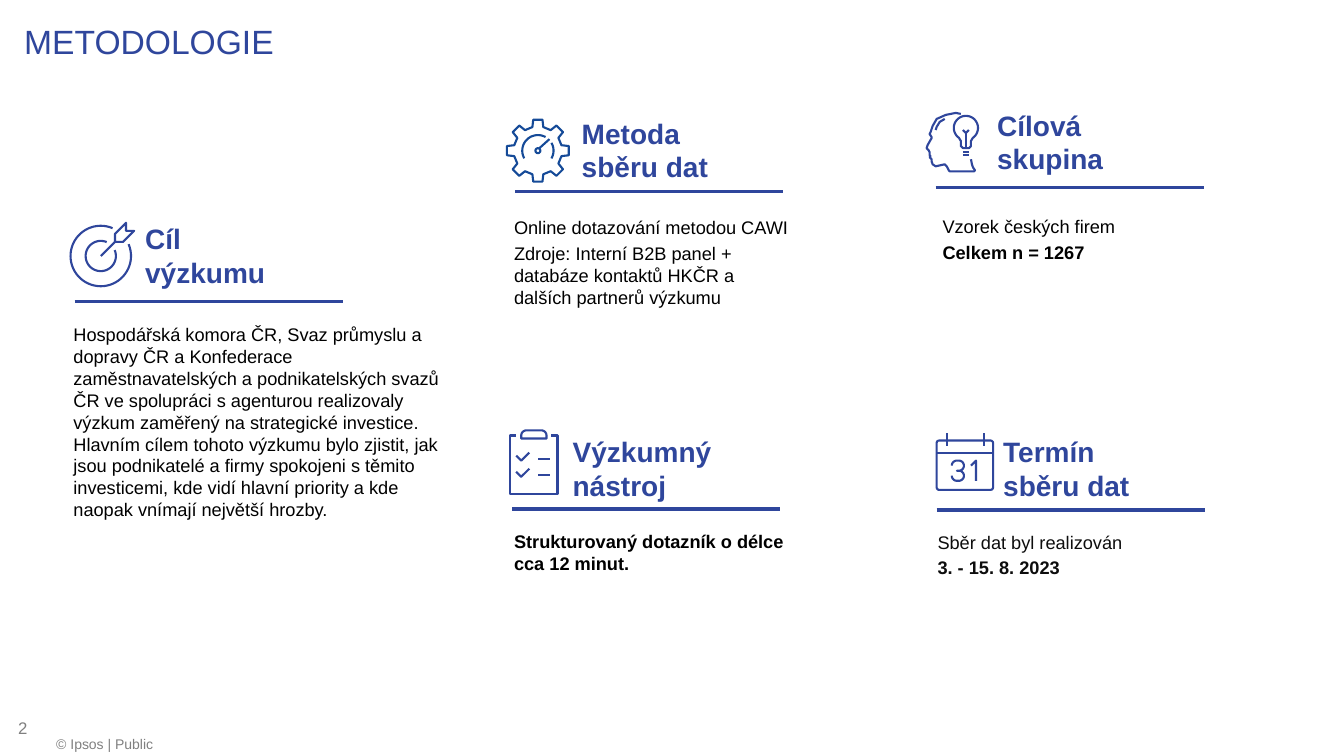
"""Builds the METODOLOGIE slide: five headed sections with line icons."""
import math

import pptx
import pptx.dml.color
import pptx.enum.shapes
import pptx.enum.text
import pptx.oxml.ns
import pptx.util
from lxml import etree

RGBColor = pptx.dml.color.RGBColor
ANCHOR = pptx.enum.text.MSO_ANCHOR
SHAPE = pptx.enum.shapes.MSO_SHAPE
BLUE = RGBColor(0x2F, 0x46, 0x9C)
GEAR_BLUE = RGBColor(0x15, 0x4A, 0x98)
GREY = RGBColor(0x80, 0x80, 0x80)
BLACK = RGBColor(0, 0, 0)
NEAR_BLACK = RGBColor(0x0D, 0x0D, 0x0D)
PX = 9144

GOAL = (
    "Hospodářská komora ČR, Svaz průmyslu a dopravy ČR a Konfederace "
    "zaměstnavatelských a podnikatelských svazů ČR ve spolupráci s agenturou realizovaly "
    "výzkum zaměřený na strategické investice. Hlavním cílem tohoto výzkumu bylo "
    "zjistit, jak jsou podnikatelé a firmy spokojeni s těmito investicemi, kde vidí "
    "hlavní priority a kde naopak vnímají největší hrozby."
)
SECTIONS = [
    (("Cíl", "výzkumu"), (132, 220), (74, 299), (63, 316, 382, 138), BLACK,
     [(GOAL, False)]),
    (("Metoda", "sběru dat"), (565, 115), (511, 190), (500, 210, 298, 136), BLACK,
     [("Online dotazování metodou CAWI", False),
      ("Zdroje: Interní B2B panel + databáze kontaktů HKČR a dalších partnerů výzkumu",
       False)]),
    (("Cílová", "skupina"), (977, 107), (928, 186), (925, 209, 324, 279), BLACK,
     [("Vzorek českých firem", False), ("Celkem n = 1267", True)]),
    (("Výzkumný", "nástroj"), (556, 431), (508, 505), (500, 521, 298, 105), BLACK,
     [("Strukturovaný dotazník o délce cca 12 minut.", True)]),
    (("Termín", "sběru dat"), (983, 431), (929, 506), (920, 522, 298, 105), NEAR_BLACK,
     [("Sběr dat byl realizován", False), ("3. - 15. 8. 2023", True)]),
]
HEAD = [
    (953, 113), (948, 112), (938, 114), (929, 118), (925, 125), (924, 128), (923, 131),
    (922, 133), (924, 136), (924, 137), (920, 144), (919, 147), (921, 149), (922, 151),
    (922, 154), (923, 155), (922, 156), (924, 158), (924, 160), (925, 163), (928, 165),
    (937, 163), (939, 165), (941, 169), (942, 170), (966, 170), (967, 169), (965, 166),
    (964, 163), (963, 158),
]


def emu(*lengths):
    """Turn px lengths into EMU."""
    return [round(length * PX) for length in lengths]


def style(paragraph, size, color, bold=False):
    """Set the font of a whole paragraph."""
    font = paragraph.font
    font.name, font.size, font.bold = "Arial", pptx.util.Pt(size), bold
    font.color.rgb = color


def text_box(page, frame, lines, size, color, gap=0, anchor=ANCHOR.TOP, insets=(10, 5)):
    """Add a wrapped text box with one paragraph per (text, bold) pair."""
    box = page.shapes.add_textbox(*emu(*frame)).text_frame
    box.word_wrap, box.vertical_anchor = True, anchor
    box.margin_left = box.margin_right = insets[0] * PX
    box.margin_top = box.margin_bottom = insets[1] * PX
    for index, (text, bold) in enumerate(lines):
        para = box.add_paragraph() if index else box.paragraphs[0]
        para.text = text
        para.space_before = pptx.util.Pt(gap if index else 0)
        style(para, size, color, bold)


def line(shapes, start, end, color=BLUE, width=1.5):
    """Add a straight line without shadow."""
    connector = shapes.add_connector(
        pptx.enum.shapes.MSO_CONNECTOR.STRAIGHT, *emu(*start, *end))
    connector.line.color.rgb, connector.line.width = color, pptx.util.Pt(width)
    properties = connector._element.find(pptx.oxml.ns.qn("p:spPr"))
    etree.SubElement(properties, pptx.oxml.ns.qn("a:effectLst"))


def hollow(shape, color):
    """Give a shape an outline only."""
    shape.shadow.inherit = False
    shape.fill.background()
    shape.line.color.rgb, shape.line.width = color, pptx.util.Pt(1.5)


def outline(shapes, points, color=BLUE, close=False):
    """Add an unfilled freeform through the points."""
    first, *rest = [emu(*point) for point in points]
    builder = shapes.build_freeform(*first)
    builder.add_line_segments(rest, close=close)
    hollow(builder.convert_to_shape(), color)


def polar(x, y, radius, degrees):
    """Return the point at an angle, clockwise from the right."""
    angle = math.radians(degrees)
    return x + radius * math.cos(angle), y + radius * math.sin(angle)


def arc(x, y, radius, start, end):
    """Return points along an arc."""
    steps = math.ceil((end - start) / 6)
    return [polar(x, y, radius, start + (end - start) * step / steps)
            for step in range(steps + 1)]


def target_icon(shapes):
    """Draw the target with its arrow."""
    for radius in (30, 15):
        outline(shapes, arc(100, 254, radius, -23, 293))
    line(shapes, (100, 254), (114, 240))
    outline(shapes, [(133, 229), (122, 240), (114, 240), (114, 232), (125, 221),
                     (125, 229)], close=True)


def gear_icon(shapes):
    """Draw the gear with its gauge."""
    center = (533.5, 149.5)
    tooth = [(-13, 24), (-8.5, 31), (8.5, 31), (13, 24)]
    rim = [polar(*center, radius, turn + angle)
           for turn in range(0, 360, 45) for angle, radius in tooth]
    outline(shapes, rim, GEAR_BLUE, close=True)
    for start, end in ((151, 299), (-30, 30)):
        outline(shapes, arc(*center, 15.5, start, end), GEAR_BLUE)
    line(shapes, (535, 147), (545, 138), GEAR_BLUE)
    hollow(shapes.add_shape(SHAPE.OVAL, *emu(531, 147, 5, 5)), GEAR_BLUE)


def head_icon(shapes):
    """Draw the head with a light bulb."""
    outline(shapes, HEAD)
    outline(shapes, [(937, 118), (932, 121), (929, 126), (928, 129)])
    bulb = arc(958, 127, 12, 125, 415)
    socket = [(963, 140), (963, 145), (961, 147), (955, 147), (953, 145), (953, 140)]
    outline(shapes, bulb + socket, close=True)
    for y in (151, 154):
        line(shapes, (955, y), (961, y))
    line(shapes, (958, 132), (958, 147))
    for x in (955, 961):
        line(shapes, (x, 129), (958, 132))


def checklist_icon(shapes):
    """Draw the clipboard with two ticked rows."""
    clip = arc(522, 432, 5, 180, 270) + arc(537, 432, 5, 270, 360)
    outline(shapes, clip + [(542, 435), (517, 435)], close=True)
    outline(shapes, [(547, 432), (553, 432), (553, 490), (506, 490), (506, 432),
                     (512, 432)])
    for y in (449, 465):
        outline(shapes, [(512, y + 3), (517, y + 8), (525, y)])
        line(shapes, (534, y + 6), (545, y + 6))


def calendar_icon(shapes):
    """Draw the calendar page showing 31."""
    sheet = shapes.add_shape(SHAPE.ROUNDED_RECTANGLE, *emu(929, 437, 56, 49))
    sheet.adjustments[0] = 0.05
    hollow(sheet, BLUE)
    line(shapes, (929, 449), (985, 449))
    for x in (939, 976):
        line(shapes, (x, 430), (x, 442))
    upper = arc(949, 462, 5, 180, 270) + arc(951, 462, 5, -90, 90)
    lower = arc(951, 472, 5, -90, 90) + arc(949, 472, 5, 90, 180)
    outline(shapes, upper + [(949, 467)] + lower)
    outline(shapes, [(968, 477), (968, 457), (963, 462)])


def section(page, heading, corner, rule, frame, color, lines):
    """Add a heading, its rule and the text below."""
    text_box(page, (*corner, 210, 67), [(text, True) for text in heading], 20, BLUE,
             anchor=ANCHOR.MIDDLE, insets=(12, 0))
    line(page.shapes, rule, (rule[0] + 266, rule[1]), width=2.25)
    text_box(page, frame, lines, 13, color, gap=2.6)


def add_title(page, text):
    """Place and format the title."""
    title = page.shapes.title
    title.left, title.top, title.width, title.height = emu(24, 14, 1285, 53)
    box = title.text_frame
    box.text, box.vertical_anchor = text, ANCHOR.MIDDLE
    box.margin_left = box.margin_right = 0
    box.paragraphs[0].alignment = pptx.enum.text.PP_ALIGN.LEFT
    style(box.paragraphs[0], 24, BLUE)


def main():
    """Build and save the deck."""
    deck = pptx.Presentation()
    deck.slide_width, deck.slide_height = emu(1333, 750)
    page = deck.slides.add_slide(deck.slide_layouts[5])
    add_title(page, "METODOLOGIE")
    text_box(page, (46, 725, 667, 27), [("© Ipsos | Public", False)], 10, GREY)
    text_box(page, (5, 702, 311, 40), [("2", False)], 12, GREY,
             anchor=ANCHOR.MIDDLE, insets=(13, 7))
    for parts in SECTIONS:
        section(page, *parts)
    for icon in (target_icon, gear_icon, head_icon, checklist_icon, calendar_icon):
        icon(page.shapes.add_group_shape().shapes)
    deck.save("out.pptx")


if __name__ == "__main__":
    main()
